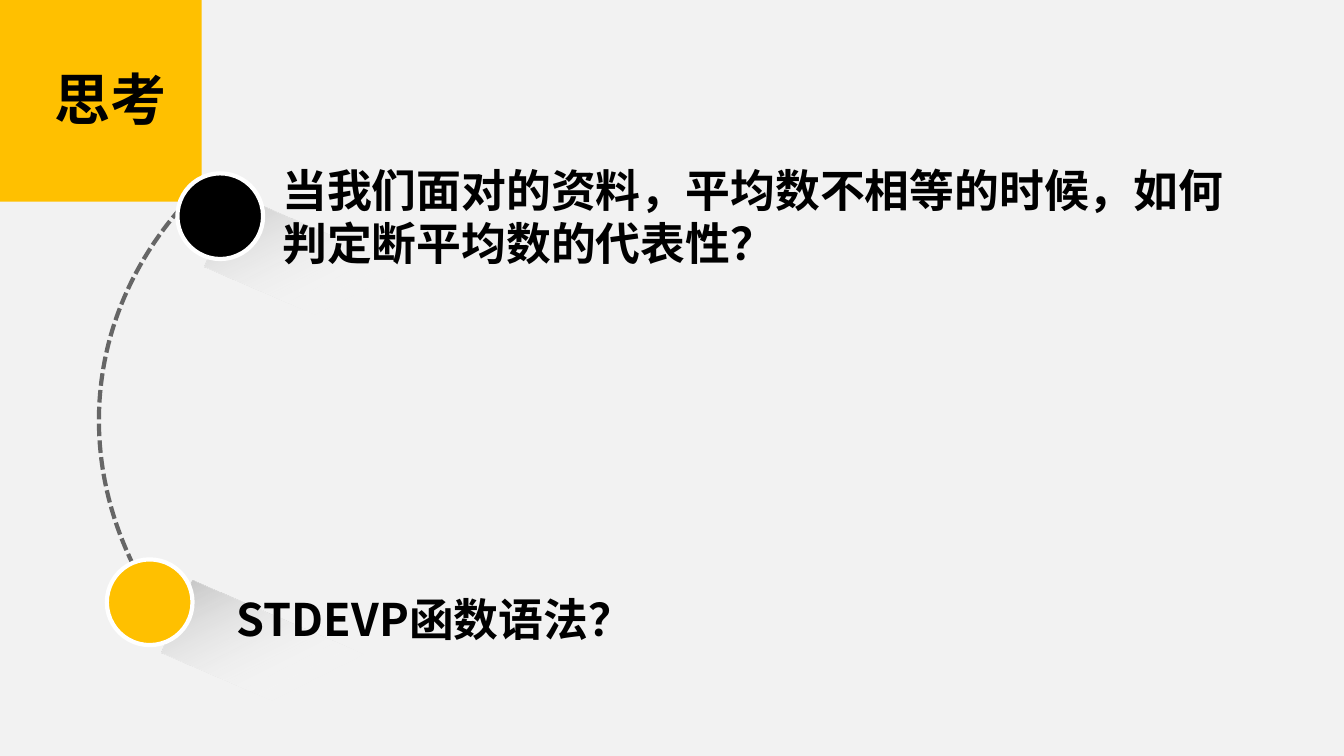
from dataclasses import dataclass

from lxml import etree
from pptx import Presentation
from pptx.dml.color import RGBColor
from pptx.enum.dml import MSO_LINE
from pptx.enum.shapes import MSO_SHAPE
from pptx.enum.text import MSO_ANCHOR, PP_ALIGN
from pptx.oxml.ns import qn
from pptx.util import Inches, Pt

ARC, OVAL, RECT = MSO_SHAPE.ARC, MSO_SHAPE.OVAL, MSO_SHAPE.RECTANGLE
TOP, LEFT = MSO_ANCHOR.TOP, PP_ALIGN.LEFT
DASH = MSO_LINE.SQUARE_DOT


@dataclass
class Theme:
    font: str = "Noto Sans CJK SC"
    title: int = 40
    body: int = 32
    line: int = 3
    back: RGBColor = RGBColor(0xF2, 0xF2, 0xF2)
    accent: RGBColor = RGBColor(0xFF, 0xC0, 0x00)
    ink: RGBColor = RGBColor(0, 0, 0)
    white: RGBColor = RGBColor(0xFF, 0xFF, 0xFF)
    dash: RGBColor = RGBColor(0x66, 0x66, 0x66)
    shade: RGBColor = RGBColor(0xBF, 0xBF, 0xBF)


theme = Theme()


def add_shape(kind, box, rotation):
    sp = slide.shapes.add_shape(kind, *map(Inches, box))
    sp.rotation = rotation
    sp.shadow.inherit = False
    return sp


def write(sp, box, lines, size):
    sp.left, sp.top, sp.width, sp.height = map(Inches, box)
    slide.shapes._spTree.append(sp._element)
    tf = sp.text_frame
    tf.text = "\n".join(lines)
    tf.word_wrap = True
    tf.vertical_anchor = TOP
    for p in tf.paragraphs:
        p.alignment = LEFT
        p.space_before = Pt(0)
        pPr = p._p.get_or_add_pPr()
        pPr.set("marL", "0")
        pPr.set("indent", "0")
        etree.SubElement(pPr, qn("a:buNone"))
        for r in p.runs:
            r.font.size = Pt(size)
            r.font.bold = True
            r.font.color.rgb = theme.ink
            r.font.name = theme.font
            ea = etree.SubElement(r._r.get_or_add_rPr(), qn("a:ea"))
            ea.set("typeface", theme.font)


prs = Presentation()
prs.slide_width, prs.slide_height = Inches(13.333), Inches(7.5)
slide = prs.slides.add_slide(prs.slide_layouts[3])
slide.background.fill.solid()
slide.background.fill.fore_color.rgb = theme.back
title, question, syntax = list(slide.placeholders)[:3]

leaf_start = (1.98, 0.12)
leaf_curves = [
    [(1.9, 0.21), (1.79, 0.28), (1.62, 0.29)],
    [(1.35, 0.29), (1.08, 0.29), (0.81, 0.29)],
    [(0.59, 0.32), (0.28, 0.59), (0.28, 0.89)],
    [(0.28, 1.24), (0.28, 1.58), (0.28, 1.93)],
    [(0.35, 1.81), (0.46, 1.73), (0.63, 1.71)],
    [(0.88, 1.71), (1.12, 1.71), (1.36, 1.71)],
    [(1.64, 1.69), (1.86, 1.55), (1.98, 1.17)],
]
steps = 16
outline = []
start = leaf_start
for c1, c2, end in leaf_curves:
    for i in range(1, steps + 1):
        t = i / steps
        u = 1 - t
        outline.append(tuple(
            u**3 * a + 3 * u * u * t * b + 3 * u * t * t * c + t**3 * d
            for a, b, c, d in zip(start, c1, c2, end)))
    start = end
builder = slide.shapes.build_freeform(*leaf_start, scale=Inches(1))
builder.add_line_segments(outline, close=True)
leaf = builder.convert_to_shape()
leaf.shadow.inherit = False
leaf.fill.solid()
leaf.fill.fore_color.rgb = theme.accent
leaf.line.fill.background()

write(title, (0.44, 0.59, 1.54, 0.77), ["思考"], theme.title)

for left, top in [(1.65, 6.27), (2.07, 2.44)]:
    shade = add_shape(RECT, (left, top, 2.75, 0.78), 23.3)
    shade.line.fill.background()
    shade.fill.gradient()
    shade.fill.gradient_angle = 320
    near, far = shade.fill.gradient_stops
    near.position, far.position = 0, 0.54
    near.color.rgb, far.color.rgb = theme.shade, theme.white
    clear = shade._element.spPr.findall(".//" + qn("a:srgbClr"))[-1]
    etree.SubElement(clear, qn("a:alpha")).set("val", "0")

arc = add_shape(ARC, (0.97, 0.61, 9.13, 7.48), 187)
arc.adjustments[0], arc.adjustments[1] = 201.812, 15.408
arc.fill.background()
arc.line.color.rgb = theme.dash
arc.line.width = Pt(theme.line)
arc.line.dash_style = DASH

for left, top, color in [(1.76, 1.72, theme.ink), (1.06, 5.55, theme.accent)]:
    dot = add_shape(OVAL, (left, top, 0.85, 0.85), 7)
    dot.fill.solid()
    dot.fill.fore_color.rgb = color
    dot.line.color.rgb = theme.white
    dot.line.width = Pt(theme.line)

write(question, (2.7, 1.56, 10.33, 1.18),
      ["当我们面对的资料，平均数不相等的时候，如何", "判定断平均数的代表性？"], theme.body)
write(syntax, (2.25, 5.82, 10.33, 0.64), ["STDEVP函数语法？"], theme.body)

prs.save("out.pptx")
